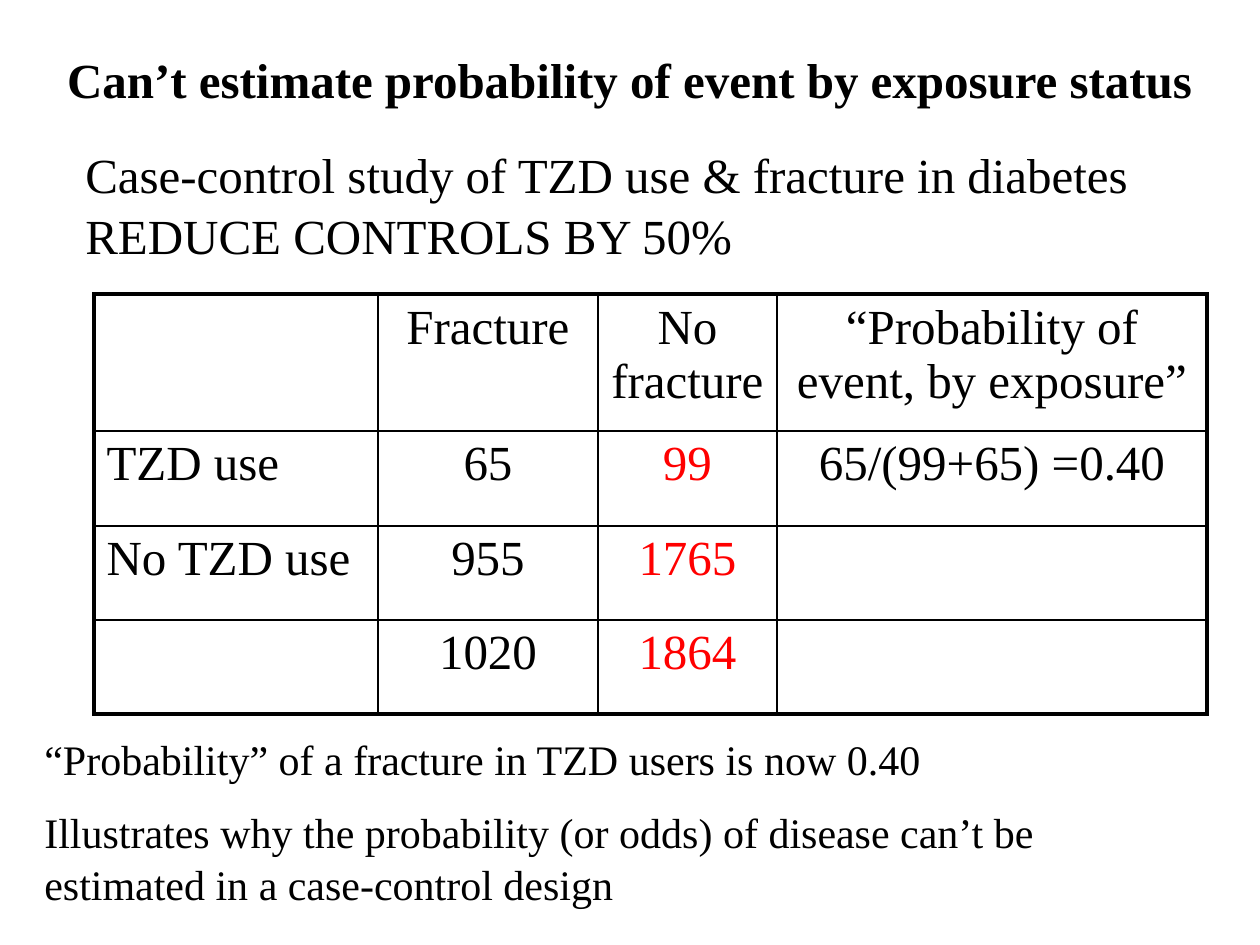
"""Build the case-control probability slide."""
from lxml.etree import SubElement
from pptx import Presentation
from pptx.dml.color import RGBColor
from pptx.enum.text import MSO_ANCHOR as ANCHOR, PP_ALIGN as ALIGN
from pptx.oxml.ns import qn
from pptx.util import Pt

PX = 914400 / 126
FONT = "Times New Roman"
BLACK = RGBColor(0, 0, 0)
RED = RGBColor(255, 0, 0)

TITLE = ["Can’t estimate probability of event by exposure status"]
STUDY = ["Case-control study of TZD use & fracture in diabetes REDUCE CONTROLS BY 50%"]
NOTES = [
    "“Probability” of a fracture in TZD users is now 0.40",
    "Illustrates why the probability (or odds) of disease can’t be estimated in a case-control design",
]
ROWS = [
    ["", "Fracture", "No fracture", "“Probability of event, by exposure”"],
    ["TZD use", "65", "99", "65/(99+65) =0.40"],
    ["No TZD use", "955", "1765", ""],
    ["", "1020", "1864", ""],
]
TABLE_AT = (94, 294)
COL_WIDTHS = [284, 220, 179, 430]
ROW_HEIGHTS = [137, 95, 94, 94]
REDUCED_COL = 2
OUTER, INNER = 2.25, 1


def px(n):
    return round(n * PX)


def style(p, size, color=BLACK, bold=False):
    for r in p.runs:
        r.font.name = FONT
        r.font.size = Pt(size)
        r.font.bold = bold
        r.font.color.rgb = color


def add_text(s, box, lines, size, align=ALIGN.LEFT, anchor=ANCHOR.TOP, bold=False, spacing=1.04):
    tf = s.shapes.add_textbox(*map(px, box)).text_frame
    tf.word_wrap = True
    tf.vertical_anchor = anchor
    tf.text = "\n".join(lines)
    for i, p in enumerate(tf.paragraphs):
        p.alignment = align
        p.line_spacing = spacing
        p.space_before = Pt(size / 2 if i else 0)
        style(p, size, bold=bold)


def set_borders(cell, widths):
    tc_pr = cell._tc.get_or_add_tcPr()
    for i, (side, width) in enumerate(widths.items()):
        ln = SubElement(tc_pr, qn(f"a:ln{side}"), w=str(Pt(width)))
        fill = SubElement(ln, qn("a:solidFill"))
        SubElement(fill, qn("a:srgbClr"), val=str(BLACK))
        tc_pr.insert(i, ln)


def add_counts_table(s):
    n_rows, n_cols = len(ROWS), len(COL_WIDTHS)
    box = (*TABLE_AT, sum(COL_WIDTHS), sum(ROW_HEIGHTS))
    table = s.shapes.add_table(n_rows, n_cols, *map(px, box)).table
    table.first_row = table.horz_banding = False
    for col, width in zip(table.columns, COL_WIDTHS):
        col.width = px(width)
    for row, height in zip(table.rows, ROW_HEIGHTS):
        row.height = px(height)
    for i, row in enumerate(ROWS):
        for j, text in enumerate(row):
            cell = table.cell(i, j)
            cell.fill.background()
            cell.text = text
            p = cell.text_frame.paragraphs[0]
            p.alignment = ALIGN.CENTER if j else ALIGN.LEFT
            style(p, 28, RED if i and j == REDUCED_COL else BLACK)
            edges = {"L": j == 0, "R": j == n_cols - 1, "T": i == 0, "B": i == n_rows - 1}
            set_borders(cell, {k: OUTER if edge else INNER for k, edge in edges.items()})


def main():
    prs = Presentation()
    prs.slide_width, prs.slide_height = px(1260), px(945)
    s = prs.slides.add_slide(prs.slide_layouts[6])
    add_text(s, (10, 0, 1239, 158), TITLE, 28, ALIGN.CENTER, ANCHOR.MIDDLE, True, 1)
    add_counts_table(s)
    add_text(s, (73, 136, 1187, 130), STUDY, 28)
    add_text(s, (32, 725, 1134, 190), NOTES, 24)
    prs.save("out.pptx")


if __name__ == "__main__":
    main()
